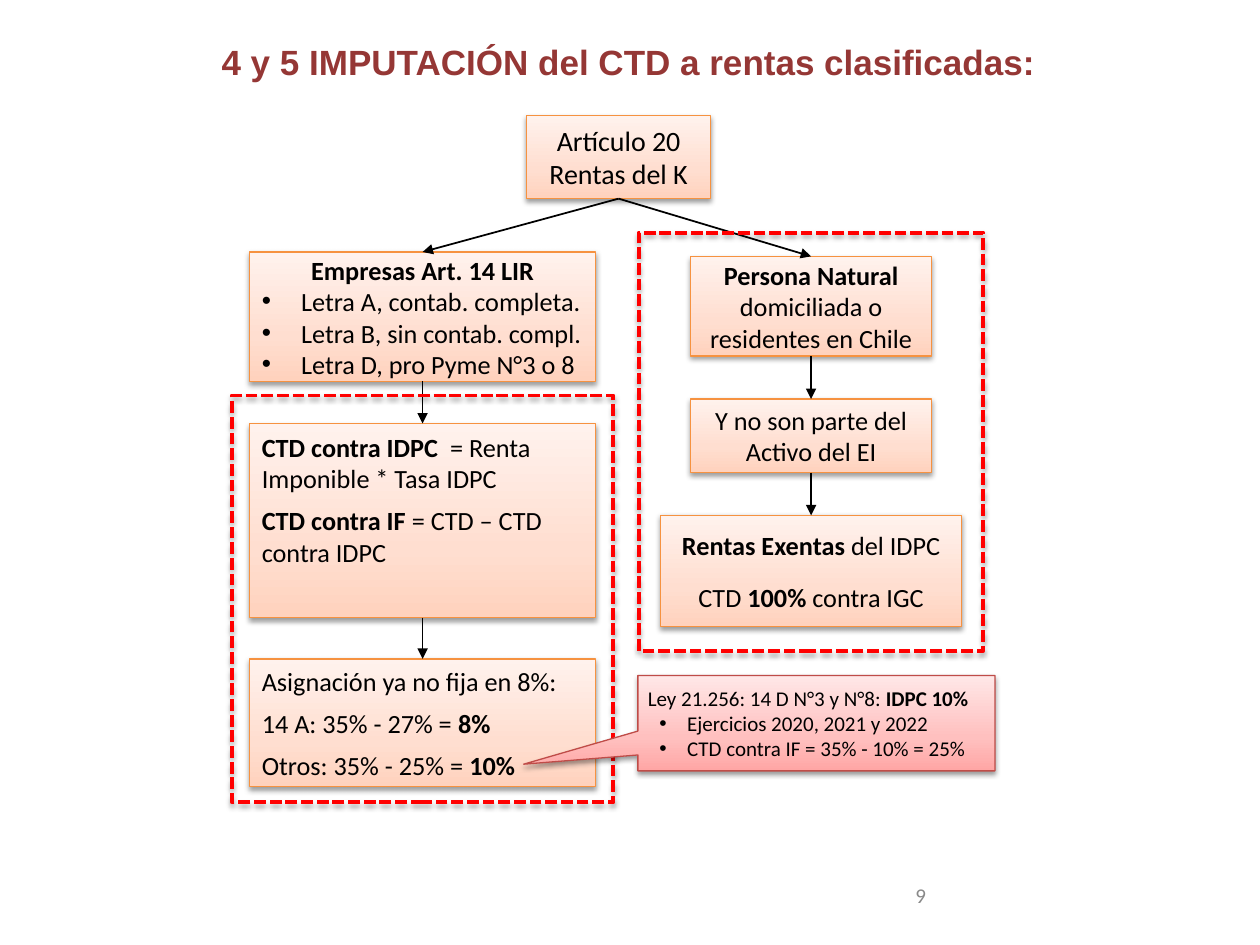
from copy import deepcopy
from itertools import pairwise

from lxml.etree import SubElement
from pptx import Presentation
from pptx.dml.color import RGBColor
from pptx.enum.dml import MSO_LINE
from pptx.enum.shapes import MSO_CONNECTOR, MSO_SHAPE
from pptx.enum.text import MSO_ANCHOR, PP_ALIGN
from pptx.oxml.ns import qn
from pptx.util import Pt

COLORS = {
    "title": "953735", "number": "898989", "text": "000000", "arrow": "000000",
    "shadow": "000000", "frame": "FF0000", "step_line": "F69240", "note_line": "BF4C48",
}
STEP_GRADIENT = ("FFD2BD", "FFDED0", "FFF2ED")
NOTE_GRADIENT = ("FFA6A5", "FFC0BF", "FFE7E7")
BOTTOM, TOP = 2, 0  # connection sites of a rectangle


def rgb(name):
    return RGBColor.from_string(COLORS[name])


def add_text(frame, text, size=15, font="Calibri", color="text", align=PP_ALIGN.LEFT,
             bold=False, before=0, bullet=None):
    """Add a paragraph; ** toggles bold, and bullet is (margin, hanging) in points."""
    first = frame.paragraphs[0]
    para = frame.add_paragraph() if first.runs else first
    para.alignment = align
    if before:
        para.space_before = Pt(before)
    if bullet:
        margin, hanging = bullet
        properties = para._p.get_or_add_pPr()
        properties.set("marL", str(Pt(margin)))
        properties.set("indent", str(-Pt(hanging)))
        SubElement(properties, qn("a:buFont"), typeface="Arial")
        SubElement(properties, qn("a:buChar"), char="•")
    for index, part in enumerate(text.split("**")):
        if part:
            span = para.add_run()
            span.text = part
            span.font.name, span.font.size = font, Pt(size)
            span.font.bold = bold or index % 2 == 1
            span.font.color.rgb = rgb(color)


def add_text_box(page, box, text, **text_format):
    frame = page.shapes.add_textbox(*map(Pt, box)).text_frame
    frame.word_wrap = True
    add_text(frame, text, **text_format)


def add_shadow(shape, opacity, distance):
    shape.shadow.inherit = False
    effects = shape._element.spPr.find(qn("a:effectLst"))
    shadow = SubElement(effects, qn("a:outerShdw"), blurRad=str(Pt(3.1)),
                        dist=str(Pt(distance)), dir="5400000", rotWithShape="0")
    color = SubElement(shadow, qn("a:srgbClr"), val=COLORS["shadow"])
    SubElement(color, qn("a:alpha"), val=str(opacity * 1000))


def add_panel(page, box, paragraphs, gradient=STEP_GRADIENT, line="step_line",
              preset=MSO_SHAPE.RECTANGLE):
    """Add a gradient shape; each paragraph is (text, format)."""
    panel = page.shapes.add_shape(preset, *map(Pt, box))
    panel.fill.gradient()
    panel.fill.gradient_angle = 90
    stop_list = panel._element.spPr.find(".//" + qn("a:gsLst"))
    stop_list.append(deepcopy(stop_list[0]))
    for stop, position, color in zip(panel.fill.gradient_stops, (0, 0.35, 1), gradient):
        stop.position = position
        stop.color.rgb = RGBColor.from_string(color)
    panel.line.color.rgb = rgb(line)
    panel.line.width = Pt(0.75)
    add_shadow(panel, 38, 1.6)
    frame = panel.text_frame
    frame.word_wrap = True
    frame.vertical_anchor = MSO_ANCHOR.MIDDLE
    for text, text_format in paragraphs:
        add_text(frame, text, **text_format)
    return panel


def add_arrow(page, source, target):
    arrow = page.shapes.add_connector(MSO_CONNECTOR.STRAIGHT, 0, 0, 0, 0)
    arrow.begin_connect(source, BOTTOM)
    arrow.end_connect(target, TOP)
    arrow.line.color.rgb = rgb("arrow")
    arrow.line.width = Pt(1)
    SubElement(arrow.line._get_or_add_ln(), qn("a:tailEnd"), type="triangle")
    SubElement(arrow._element.spPr, qn("a:effectLst"))


def add_dashed_frame(page, box):
    outline = page.shapes.add_shape(MSO_SHAPE.RECTANGLE, *map(Pt, box))
    outline.fill.background()
    outline.line.color.rgb = rgb("frame")
    outline.line.width = Pt(2.25)
    outline.line.dash_style = MSO_LINE.SQUARE_DOT
    add_shadow(outline, 35, 1.8)


def add_branch(page, box, root, steps, dashed_top):
    """Stack (top, width, height, paragraphs) steps on the centre of box, below root."""
    left, top, width, height = box
    panels = [
        add_panel(page, (left + (width - step_width) / 2, top + offset, step_width, step_height),
                  paragraphs)
        for offset, step_width, step_height, paragraphs in steps
    ]
    for source, target in pairwise([root, *panels]):
        add_arrow(page, source, target)
    add_dashed_frame(page, (left, top + dashed_top, width, height - dashed_top))
    return panels


def add_companies(page, box, root):
    bullet = {"bullet": (22.5, 22.5)}
    gap = {"before": 6}
    companies = [
        ("**Empresas Art. 14 LIR**", {"align": PP_ALIGN.CENTER}),
        ("Letra A, contab. completa.", bullet),
        ("Letra B, sin contab. compl.", bullet),
        ("Letra D, pro Pyme N°3 o 8", bullet),
    ]
    credit = [
        ("**CTD contra IDPC  **= Renta Imponible * Tasa IDPC", {}),
        ("**CTD contra IF **= CTD – CTD contra IDPC", gap),
    ]
    allocation = [
        ("Asignación ya no fija en 8%:", {}),
        ("14 A: 35% - 27% = **8%**", gap),
        ("Otros: 35% - 25% = **10%**", gap),
    ]
    steps = [(0, 198, 74, companies), (98, 198, 111, credit), (232.5, 198, 73, allocation)]
    panels = add_branch(page, box, root, steps, dashed_top=82)
    panels[1].text_frame.margin_bottom = Pt(28)


def add_individuals(page, box, root):
    center = {"align": PP_ALIGN.CENTER}
    person = [("**Persona Natural **domiciliada o residentes en Chile", center)]
    condition = [("Y no son parte del Activo del EI", center)]
    exempt = [
        ("**Rentas Exentas **del IDPC", center),
        ("CTD **100%** contra IGC", {**center, "before": 12}),
    ]
    steps = [(13.5, 137.5, 57, person), (95, 137.5, 42, condition), (161.5, 172, 63.5, exempt)]
    add_branch(page, box, root, steps, dashed_top=0)


def add_law_note(page, box):
    small = {"size": 12}
    bullet = {**small, "bullet": (22.5, 16)}
    note = add_panel(page, box, [
        ("Ley 21.256: 14 D N°3 y N°8: **IDPC 10%**", small),
        ("Ejercicios 2020, 2021 y 2022", bullet),
        ("CTD contra IF = 35% - 10% = 25%", bullet),
    ], NOTE_GRADIENT, "note_line", MSO_SHAPE.RECTANGULAR_CALLOUT)
    note.adjustments[0], note.adjustments[1] = -0.82, 0.43
    frame = note.text_frame
    frame.margin_left = frame.margin_right = Pt(5.7)
    frame.margin_top = frame.margin_bottom = 0


def main():
    deck = Presentation()
    deck.slide_width, deck.slide_height = Pt(720), Pt(540)
    page = deck.slides.add_slide(deck.slide_layouts[6])
    add_text_box(page, (119.5, 19.5, 647, 31.5),
                 "4 y 5 IMPUTACIÓN del CTD a rentas clasificadas:", size=20, font="Arial",
                 color="title", bold=True, align=PP_ALIGN.JUSTIFY)
    add_text_box(page, (516, 500.5, 168, 29), "9", size=12, color="number")
    root = add_panel(page, (301, 66, 105, 47.5), [
        ("Artículo 20 Rentas del K", {"size": 16, "align": PP_ALIGN.CENTER}),
    ])
    add_companies(page, (132.5, 144, 218, 314.5), root)
    add_individuals(page, (365, 133, 197, 239), root)
    add_law_note(page, (364.5, 386, 204, 54.5))
    deck.save("out.pptx")


if __name__ == "__main__":
    main()
